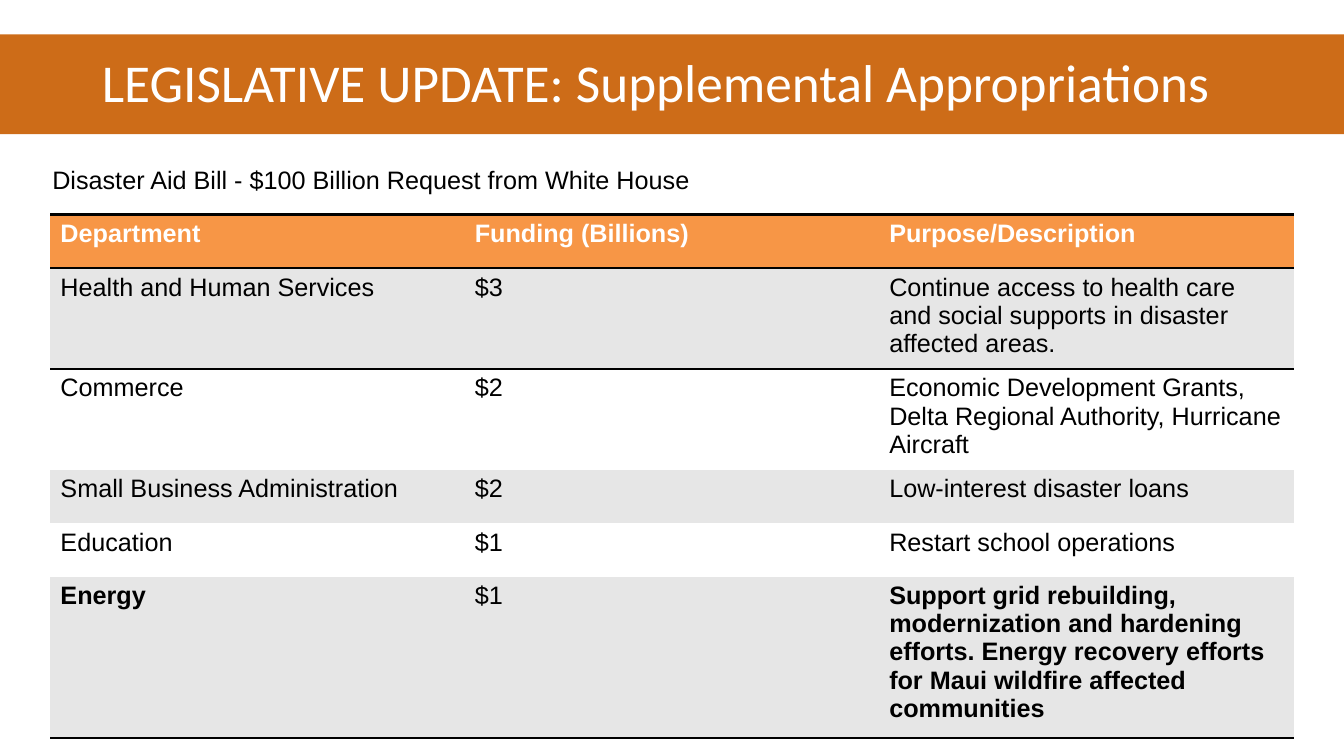
from dataclasses import dataclass

from lxml.etree import SubElement
from pptx import Presentation
from pptx.dml.color import RGBColor
from pptx.enum.shapes import MSO_SHAPE
from pptx.oxml.ns import qn
from pptx.util import Emu, Pt

EMU_PER_PX = 9144
SLIDE_WIDTH, SLIDE_HEIGHT = 1333, 750
COLUMN_WIDTH = 411
BLACK, WHITE, GREY = "000000", "FFFFFF", "E6E6E6"
BANNER_ORANGE, HEADER_ORANGE = "CD6C18", "F79646"
NO_GRID_STYLE = "{2D5ABB26-0587-4C30-8999-92F81FD0307C}"


@dataclass(frozen=True)
class TextLine:
    text: str
    left: int
    top: int
    width: int
    height: int
    margins: tuple[int, int]
    font: str
    size: int
    color: str


@dataclass(frozen=True)
class FundingRow:
    cells: tuple[str, str, str]
    height: int
    fill: str
    color: str = BLACK
    bold_columns: tuple[int, ...] = ()
    borders: tuple[str, ...] = ()


TEXT_LINES = (
    TextLine("LEGISLATIVE UPDATE: Supplemental Appropriations",
             101, 48, 1135, 66, (0, 1), "Calibri", 38, WHITE),
    TextLine("Disaster Aid Bill - $100 Billion Request from White House",
             42, 158, 1242, 40, (10, 5), "Arial", 18, BLACK),
)

FUNDING_ROWS = (
    FundingRow(("Department", "Funding (Billions)", "Purpose/Description"),
               53, HEADER_ORANGE, WHITE, (0, 1, 2), ("lnT", "lnB")),
    FundingRow(("Health and Human Services", "$3",
                "Continue access to health care and social supports in disaster "
                "affected areas."), 100, GREY, borders=("lnT",)),
    FundingRow(("Commerce", "$2",
                "Economic Development Grants, Delta Regional Authority, "
                "Hurricane Aircraft"), 100, WHITE),
    FundingRow(("Small Business Administration", "$2",
                "Low-interest disaster loans"), 53, GREY),
    FundingRow(("Education", "$1", "Restart school operations"), 53, WHITE),
    FundingRow(("Energy", "$1",
                "Support grid rebuilding, modernization and hardening efforts. "
                "Energy recovery efforts for Maui wildfire affected communities"),
               160, GREY, bold_columns=(0, 2), borders=("lnB",)),
)


def px(length: int) -> Emu:
    return Emu(length * EMU_PER_PX)


def rgb(color: str) -> RGBColor:
    return RGBColor.from_string(color)


def style_font(para, name: str, size: int, color: str, bold: bool = False) -> None:
    para.font.name = name
    para.font.size = Pt(size)
    para.font.bold = bold
    para.font.color.rgb = rgb(color)


def draw_banner(page) -> None:
    banner = page.shapes.add_shape(
        MSO_SHAPE.RECTANGLE, 0, px(34), px(SLIDE_WIDTH), px(99))
    banner.shadow.inherit = False
    banner.fill.solid()
    banner.fill.fore_color.rgb = rgb(BANNER_ORANGE)
    banner.line.fill.background()


def draw_text(page, line: TextLine) -> None:
    box = page.shapes.add_textbox(
        px(line.left), px(line.top), px(line.width), px(line.height))
    frame = box.text_frame
    frame.word_wrap = True
    side, top = line.margins
    frame.margin_left = frame.margin_right = px(side)
    frame.margin_top = px(top)
    para = frame.paragraphs[0]
    para.text = line.text
    style_font(para, line.font, line.size, line.color)


def add_border(cell, edge: str) -> None:
    properties = cell._tc.get_or_add_tcPr()
    border = SubElement(properties, qn(f"a:{edge}"), w=str(Pt(2)))
    fill = SubElement(border, qn("a:solidFill"))
    SubElement(fill, qn("a:srgbClr"), val=BLACK)


def draw_table(page, rows: tuple[FundingRow, ...]) -> None:
    column_count = len(rows[0].cells)
    table = page.shapes.add_table(
        len(rows), column_count, px(50), px(213),
        px(column_count * COLUMN_WIDTH), px(sum(row.height for row in rows))).table
    table._tbl.tblPr.find(qn("a:tableStyleId")).text = NO_GRID_STYLE
    for column in table.columns:
        column.width = px(COLUMN_WIDTH)
    for row_index, row in enumerate(rows):
        table.rows[row_index].height = px(row.height)
        for column_index, text in enumerate(row.cells):
            cell = table.cell(row_index, column_index)
            for edge in row.borders:
                add_border(cell, edge)
            cell.fill.solid()
            cell.fill.fore_color.rgb = rgb(row.fill)
            para = cell.text_frame.paragraphs[0]
            para.text = text
            style_font(para, "Arial", 18, row.color, column_index in row.bold_columns)


def main() -> None:
    deck = Presentation()
    deck.slide_width, deck.slide_height = px(SLIDE_WIDTH), px(SLIDE_HEIGHT)
    page = deck.slides.add_slide(deck.slide_layouts[6])
    draw_banner(page)
    for line in TEXT_LINES:
        draw_text(page, line)
    draw_table(page, FUNDING_ROWS)
    deck.save("out.pptx")


if __name__ == "__main__":
    main()
